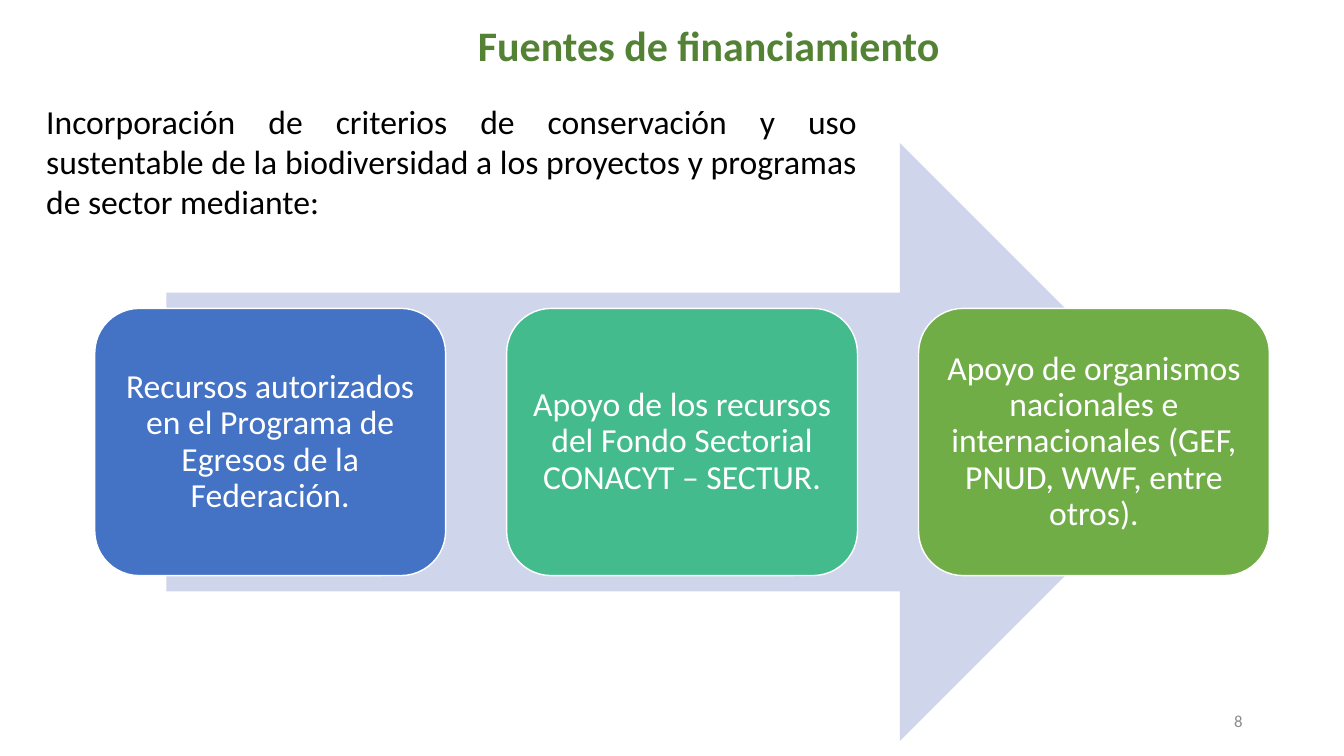
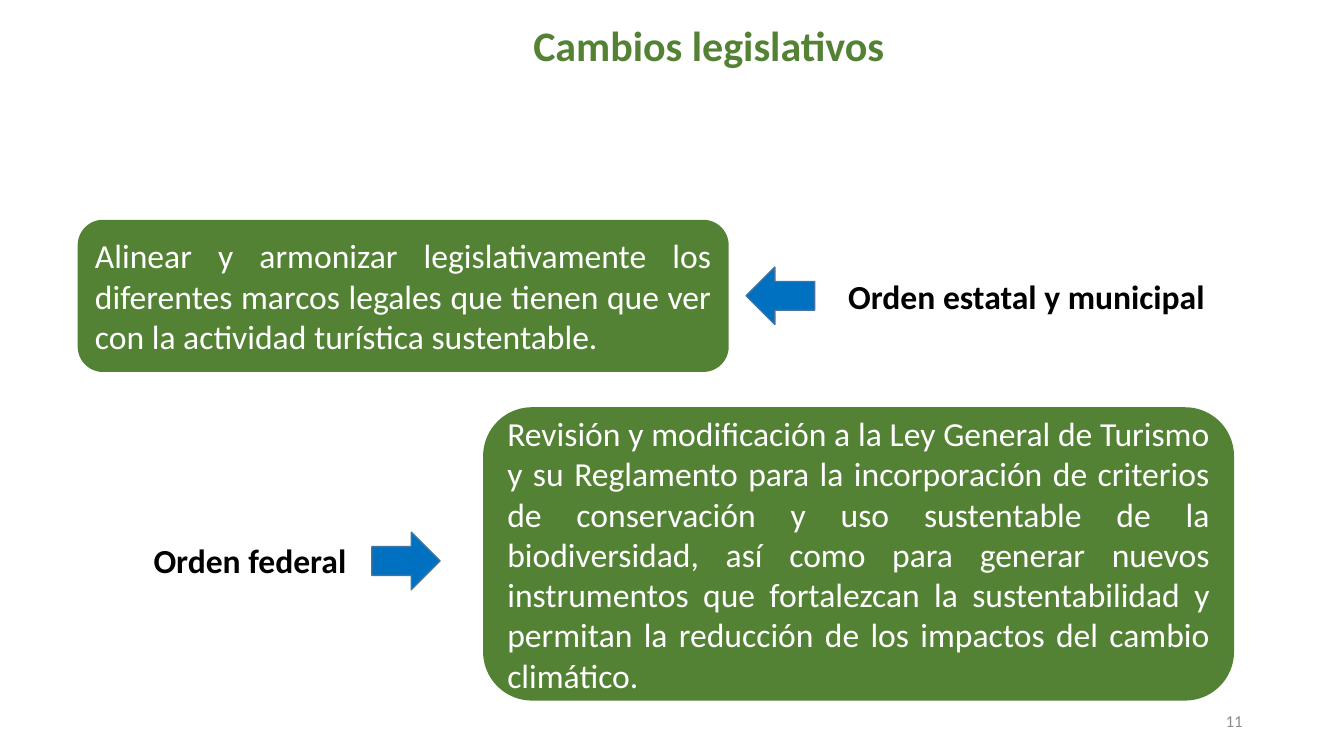
from typing import NamedTuple

from pptx import Presentation
from pptx.dml.color import RGBColor
from pptx.enum.shapes import MSO_SHAPE as Form
from pptx.enum.text import MSO_ANCHOR as Anchor, PP_ALIGN as Align
from pptx.util import Inches, Pt

WIDE, HIGH = Inches(13.33), Inches(7.5)
FONT = "Calibri"
WHITE = RGBColor(0xFF, 0xFF, 0xFF)
BLACK = RGBColor(0x00, 0x00, 0x00)
GREEN = RGBColor(0x54, 0x82, 0x35)
GRAY = RGBColor(0x8C, 0x8C, 0x8C)
PALE = RGBColor(0xCF, 0xD5, 0xEA)
BLUE = RGBColor(0x44, 0x72, 0xC4)
TEAL = RGBColor(0x43, 0xBB, 0x8D)
LEAF = RGBColor(0x70, 0xAD, 0x47)
AZURE = RGBColor(0x00, 0x70, 0xC0)
STEEL = RGBColor(0x43, 0x73, 0x9E)


class Box(NamedTuple):
    """A region of the slide."""
    left: int
    top: int
    width: int
    height: int


PAGE = Box(0, 0, WIDE, HIGH)


def share(box, x, y, w, h):
    """Return the region at the given percentages of a box."""
    return Box(int(box.left + box.width * x / 100),
               int(box.top + box.height * y / 100),
               int(box.width * w / 100),
               int(box.height * h / 100))


def write(shape, text, size=24, color=BLACK, align=Align.CENTER,
          bold=False, anchor=Anchor.MIDDLE, space=None):
    """Fill a shape with one styled paragraph."""
    frame = shape.text_frame
    frame.word_wrap = True
    frame.vertical_anchor = anchor
    para = frame.paragraphs[0]
    para.alignment = align
    if space:
        para.line_spacing = space
    run = para.add_run()
    run.text = text
    font = run.font
    font.name, font.size, font.bold = FONT, Pt(size), bold
    font.color.rgb = color


def label(slide, box, text, **style):
    """Add a text box."""
    write(slide.shapes.add_textbox(*box), text, **style)


def draw(slide, form, box, fill, line=None):
    """Add a flat preset shape."""
    shape = slide.shapes.add_shape(form, *box)
    shape.shadow.inherit = False
    shape.fill.solid()
    shape.fill.fore_color.rgb = fill
    if line is None:
        shape.line.fill.background()
    else:
        shape.line.color.rgb = line
        shape.line.width = Pt(1)
    return shape


def start(deck, title, number):
    """Add a slide with its title and number."""
    slide = deck.slides.add_slide(deck.slide_layouts[6])
    label(slide, share(PAGE, 4.3, -3.3, 96.9, 19.3), title,
          size=30, color=GREEN, bold=True, space=0.9)
    label(slide, share(PAGE, 70.7, 92.7, 22.5, 5.3), str(number),
          size=12, color=GRAY, align=Align.RIGHT)
    return slide


def flow(slide, box, cards):
    """Spread cards evenly over a broad arrow."""
    draw(slide, Form.RIGHT_ARROW, share(box, 6.1, 0, 87.9, 100), PALE)
    width, height = 29.87, 44.7
    step = (100 - width) / (len(cards) - 1)
    for i, (text, fill) in enumerate(cards):
        spot = share(box, i * step, (100 - height) / 2, width, height)
        card = draw(slide, Form.ROUNDED_RECTANGLE, spot, fill, WHITE)
        frame = card.text_frame
        frame.margin_top = frame.margin_bottom = Inches(0.1)
        write(card, text, color=WHITE, space=0.9)


def change(slide, box, text, order, card, arrow, name, turn=0):
    """Place a card, its order of government and the arrow between."""
    shape = draw(slide, Form.ROUNDED_RECTANGLE, share(box, *card), GREEN)
    write(shape, text, color=WHITE, align=Align.JUSTIFY)
    label(slide, share(box, *name), order, bold=True, anchor=Anchor.TOP)
    mark = draw(slide, Form.RIGHT_ARROW, share(box, *arrow), AZURE, STEEL)
    mark.rotation = turn


def funds(deck):
    """Build the slide on sources of funding."""
    slide = start(deck, "Fuentes de financiamiento", 8)
    flow(slide, share(PAGE, 7.05, 18.93, 87.4, 79.07), [
        ("Recursos autorizados en el Programa de Egresos de la "
         "Federación.", BLUE),
        ("Apoyo de los recursos del Fondo Sectorial CONACYT – SECTUR.", TEAL),
        ("Apoyo de organismos nacionales e internacionales (GEF, PNUD, "
         "WWF, entre otros).", LEAF),
    ])
    label(slide, share(PAGE, 2.7, 12.67, 61.8, 17.47),
          "Incorporación de criterios de conservación y uso sustentable de "
          "la biodiversidad a los proyectos y programas de sector mediante:",
          align=Align.JUSTIFY, anchor=Anchor.TOP)


def laws(deck):
    """Build the slide on changes in the law."""
    slide = start(deck, "Cambios legislativos", 11)
    change(slide, share(PAGE, 5.78, 29.07, 86.35, 20.13),
           "Alinear y armonizar legislativamente los diferentes marcos "
           "legales que tienen que ver con la actividad turística "
           "sustentable.",
           "Orden estatal y municipal",
           card=(0, 0, 56.1, 100), arrow=(57.6, 31.1, 5.9, 37.7),
           name=(63.5, 33.8, 36.5, 33.1), turn=180)
    change(slide, share(PAGE, 2.85, 53.87, 88.97, 38.8),
           "Revisión y modificación a la Ley General de Turismo y su "
           "Reglamento para la incorporación de criterios de conservación "
           "y uso sustentable de la biodiversidad, así como para generar "
           "nuevos instrumentos que fortalezcan la sustentabilidad y "
           "permitan la reducción de los impactos del cambio climático.",
           "Orden federal",
           card=(37.2, 0, 62.8, 100), arrow=(27.9, 42.6, 5.7, 19.6),
           name=(0, 43.6, 35.4, 17.2))


def main():
    """Build and save the deck."""
    deck = Presentation()
    deck.slide_width, deck.slide_height = WIDE, HIGH
    funds(deck)
    laws(deck)
    deck.save("out.pptx")


if __name__ == "__main__":
    main()
